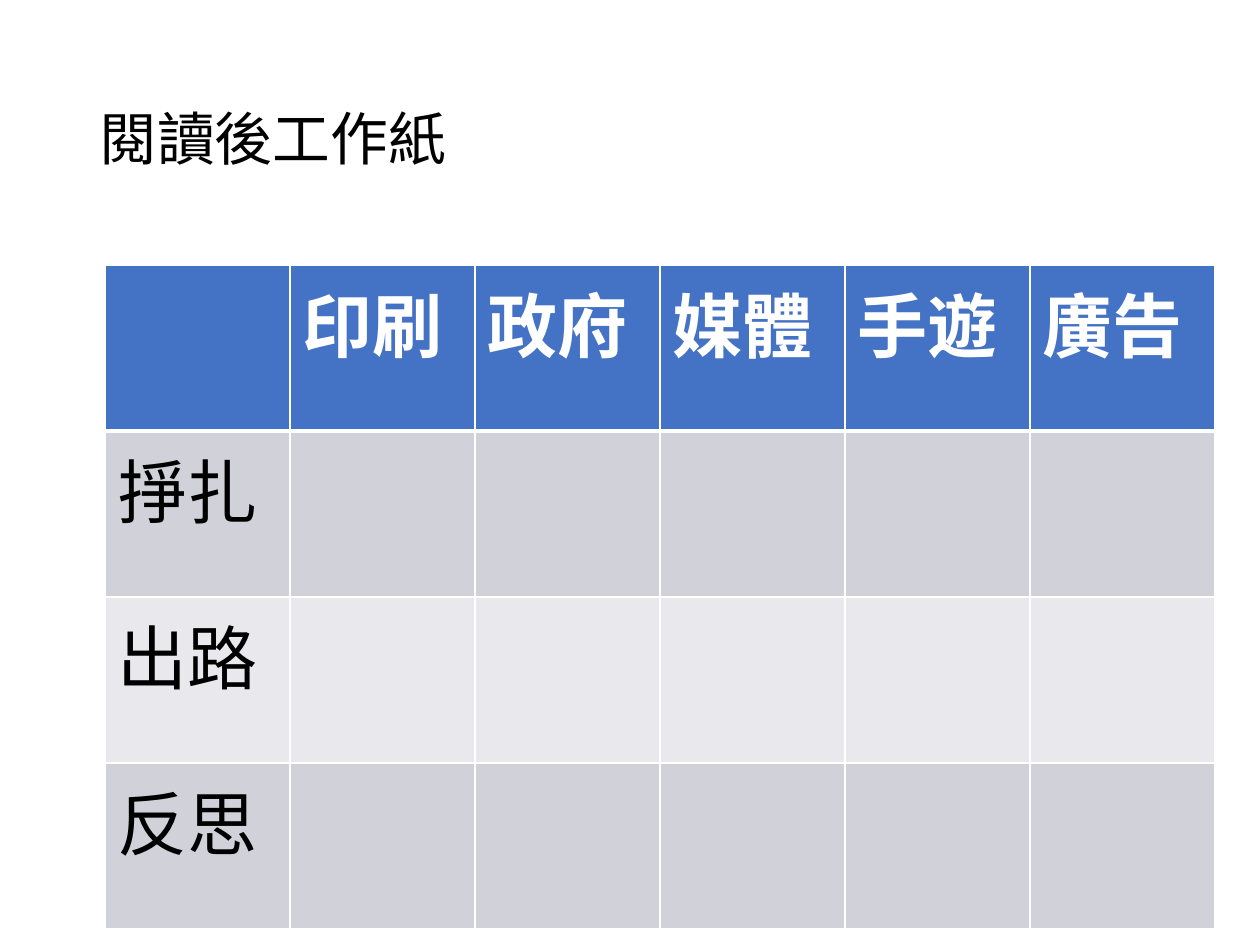
from lxml import etree
from pptx import Presentation
from pptx import util as u
from pptx.dml.color import RGBColor
from pptx.enum import text
from pptx.oxml.ns import qn

SCALE = 914400 / 126


def px(count):
    return u.Emu(round(count * SCALE))


def paint(target, color):
    if hasattr(target, "solid"):
        target.solid()
        target.fore_color.rgb = RGBColor.from_string(color)
    else:
        target.color.rgb = RGBColor.from_string(color)


deck = Presentation()
deck.slide_width, deck.slide_height = px(1260), px(945)
page = deck.slides.add_slide(deck.slide_layouts[6])

box = page.shapes.add_textbox(px(87), px(50), px(1086), px(183))
frame = box.text_frame
frame.word_wrap = True
frame.vertical_anchor = text.MSO_ANCHOR.MIDDLE
frame.text = "閱讀後工作紙"
para = frame.paragraphs[0]
para.line_spacing = 0.9
span = para.runs[0]
span.font.name = "Calibri"
span.font.size = u.Pt(33)
paint(span.font, "000000")

rows = [
    ["", "印刷", "政府", "媒體", "手遊", "廣告"],
    ["掙扎"] + [""] * 5,
    ["出路"] + [""] * 5,
    ["反思"] + [""] * 5,
]
row_fills = ["4472C4", "D1D1DA", "E9E9ED", "D1D1DA"]

table = page.shapes.add_table(4, 6, px(105), px(265), px(1110), px(664)).table
for column in table.columns:
    column.width = px(185)

for r, words in enumerate(rows):
    table.rows[r].height = px(166)
    for c, word in enumerate(words):
        cell = table.cell(r, c)
        properties = cell._tc.get_or_add_tcPr()
        for side in ("lnL", "lnR", "lnT", "lnB"):
            thick = (r, side) in ((0, "lnB"), (1, "lnT"))
            width = u.Pt(3 if thick else 1)
            line = etree.SubElement(properties, qn(f"a:{side}"), w=str(width))
            solid = etree.SubElement(line, qn("a:solidFill"))
            etree.SubElement(solid, qn("a:srgbClr"), val="FFFFFF")
        paint(cell.fill, row_fills[r])
        cell.text_frame.text = word
        para = cell.text_frame.paragraphs[0]
        para.font.size = u.Pt(40)
        for span in para.runs:
            span.font.name = "Arial"
            span.font.size = u.Pt(40)
            span.font.bold = r == 0
            paint(span.font, "FFFFFF" if r == 0 else "000000")

deck.save("out.pptx")
